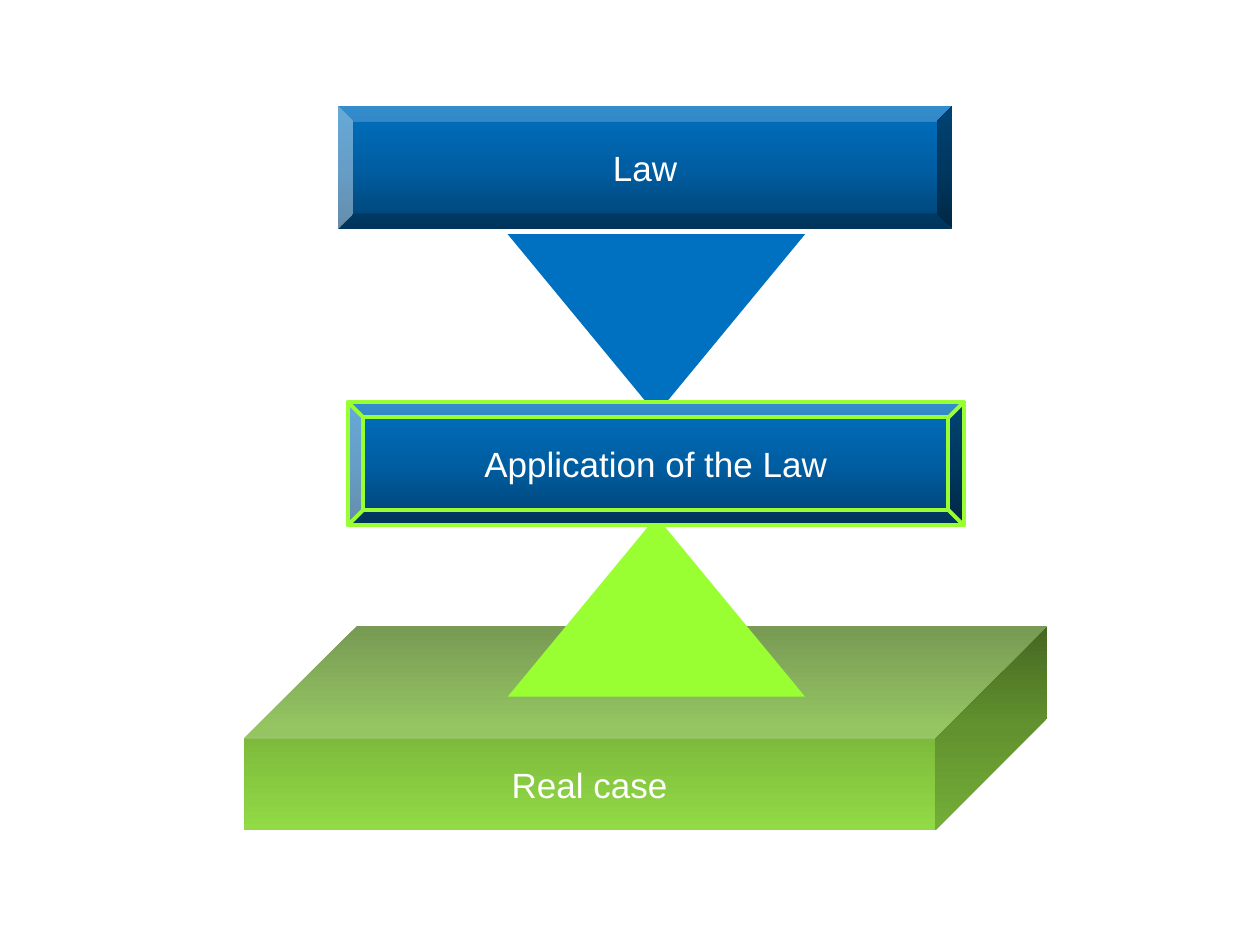
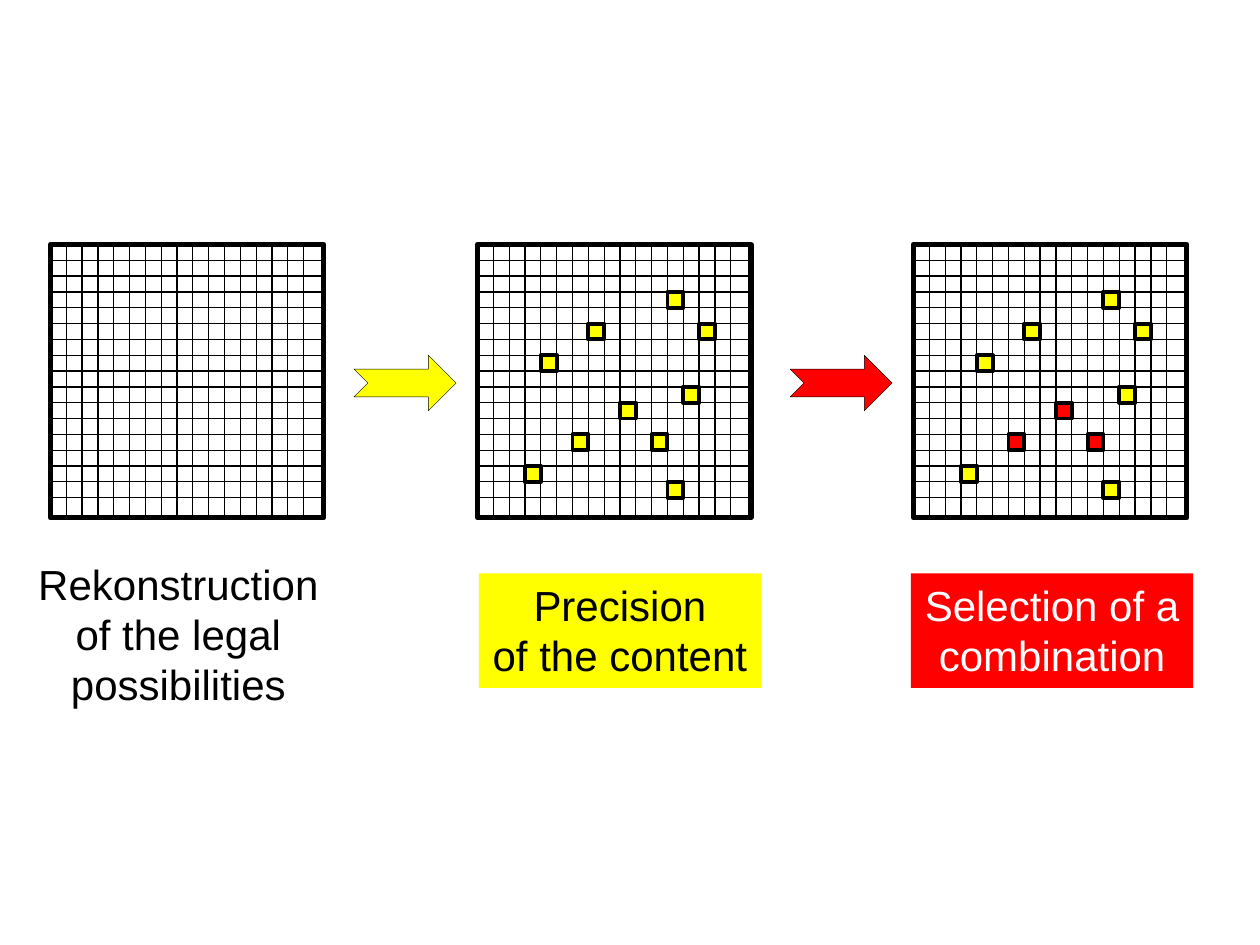
from collections import namedtuple
from copy import deepcopy
from dataclasses import dataclass

from lxml import etree
from pptx import Presentation
from pptx import util as u
from pptx.dml.color import RGBColor
from pptx.enum import shapes, text
from pptx.oxml.ns import qn

Box = namedtuple("Box", "left top width height")
Kind = shapes.MSO_SHAPE


@dataclass(frozen=True)
class Theme:
    """Colours, font and sizes used on both slides."""
    font: str = "Arial"
    label: int = 20
    caption: int = 24
    black: str = "000000"
    white: str = "FFFFFF"
    blue: str = "0070C0"
    lime: str = "99FF33"
    yellow: str = "FFFF00"
    red: str = "FF0000"
    blues: tuple = ("004272", "005EA2", "0070C0")
    greens: tuple = ("57812A", "7BB73B", "92DA46")
    frame_line: float = 3
    mark_line: float = 2.25
    grid_line: float = 0.75
    arrow_line: float = 0.25


THEME = Theme()
UPWARD, DOWNWARD = 90, 270
GRID_LINES = 16
GRID_REACH = 2.01
GRID_SIZE = 2.17
MARKS = [(4, 7), (7, 5), (9, 10), (12, 15), (13, 9),
         (12, 3), (3, 14), (6, 12), (11, 12), (14, 5)]
SELECTED = {(9, 10), (6, 12), (11, 12)}


def inside(box, left, top, width, height):
    """Return a box placed relative to another box."""
    return Box(box.left + left, box.top + top, width, height)


def inches(*lengths):
    """Turn plain numbers into lengths."""
    return [u.Inches(length) for length in lengths]


def colour(value):
    """Turn a hex value into a colour."""
    return RGBColor.from_string(value)


def set_gradient(shape, colours, angle):
    """Fill a shape with evenly spaced gradient stops."""
    shape.fill.gradient()
    shape.fill.gradient_angle = angle
    stop_list = shape._element.spPr.find(".//" + qn("a:gsLst"))
    stop_list.insert(1, deepcopy(stop_list[0]))
    for index, (stop, value) in enumerate(zip(shape.fill.gradient_stops, colours)):
        stop.position = index / (len(colours) - 1)
        stop.color.rgb = colour(value)


def add_block(parent, kind, box, fill=None, line=None, weight=1):
    """Add a flat preset shape with an optional outline."""
    shape = parent.shapes.add_shape(kind, *inches(*box))
    shape.shadow.inherit = False
    if fill:
        shape.fill.solid()
        shape.fill.fore_color.rgb = colour(fill)
    else:
        shape.fill.background()
    if line:
        shape.line.color.rgb = colour(line)
        shape.line.width = u.Pt(weight)
    else:
        shape.line.fill.background()
    return shape


def add_line(parent, start, end):
    """Add one thin grid line."""
    line = parent.shapes.add_connector(
        shapes.MSO_CONNECTOR.STRAIGHT, *inches(*start, *end))
    line.line.color.rgb = colour(THEME.black)
    line.line.width = u.Pt(THEME.grid_line)
    etree.SubElement(line._element.spPr, qn("a:effectLst"))


def write(shape, lines, size=THEME.label, color=THEME.white, wrap=True,
          anchor=text.MSO_ANCHOR.MIDDLE):
    """Write centred paragraphs into a shape."""
    frame = shape.text_frame
    frame.word_wrap = wrap
    frame.vertical_anchor = anchor
    if not wrap:
        frame.auto_size = text.MSO_AUTO_SIZE.SHAPE_TO_FIT_TEXT
    for index, line in enumerate(lines):
        para = frame.add_paragraph() if index else frame.paragraphs[0]
        para.alignment = text.PP_ALIGN.CENTER
        span = para.add_run()
        span.text = line
        span.font.name = THEME.font
        span.font.size = u.Pt(size)
        span.font.color.rgb = colour(color)


def add_plate(page, box, label, line=None):
    """Add a bevelled blue plate with its label."""
    plate = add_block(page, Kind.BEVEL, box, line=line, weight=THEME.mark_line)
    set_gradient(plate, THEME.blues, UPWARD)
    write(plate, [label])


def law_diagram(page, box):
    """Draw law and real case meeting in the application of the law."""
    add_plate(page, inside(box, 0.74, 0, 4.88, 0.98), "Law")
    law_wedge = add_block(page, Kind.ISOSCELES_TRIANGLE,
                          inside(box, 2.09, 1.02, 2.36, 1.43), THEME.blue)
    law_wedge._element.spPr.xfrm.set("flipV", "1")
    case_slab = add_block(page, Kind.CUBE, inside(box, 0, 4.13, 6.37, 1.62))
    case_slab.adjustments[0] = 0.55
    set_gradient(case_slab, THEME.greens, DOWNWARD)
    write(case_slab, ["Real case"])
    add_block(page, Kind.ISOSCELES_TRIANGLE,
              inside(box, 2.09, 3.26, 2.36, 1.43), THEME.lime)
    add_plate(page, inside(box, 0.82, 2.35, 4.89, 0.98),
              "Application of the Law", THEME.lime)


def add_grid(page, box):
    """Draw a framed grid of possibilities as one group."""
    group = page.shapes.add_group_shape()
    add_block(group, Kind.RECTANGLE, box, THEME.white, THEME.black, THEME.frame_line)
    right, bottom = box.left + box.width, box.top + box.height
    for number in range(1, GRID_LINES + 1):
        offset = number * GRID_REACH / GRID_LINES
        across, down = box.left + offset, box.top + offset
        add_line(group, (across, box.top), (across, bottom))
        add_line(group, (right, down), (box.left, down))


def add_marks(page, box, selected_fill):
    """Mark cells of the grid, filling the selected ones separately."""
    pitch = GRID_REACH / GRID_LINES
    for column, row in MARKS:
        fill = selected_fill if (column, row) in SELECTED else THEME.yellow
        cell = inside(box, column * pitch, row * pitch, pitch, pitch)
        add_block(page, Kind.RECTANGLE, cell, fill, THEME.black, THEME.mark_line)


def add_caption(page, box, lines, fill, color):
    """Add the caption below a grid, on a coloured panel if it has a fill."""
    if fill:
        caption = add_block(page, Kind.RECTANGLE, box, fill)
    else:
        caption = page.shapes.add_textbox(*inches(*box))
    write(caption, lines, size=THEME.caption, color=color, wrap=False,
          anchor=text.MSO_ANCHOR.TOP)


def add_stage(page, box, caption_box, lines, fill=None, color=THEME.black):
    """Draw one stage: grid, caption and, when filled, arrow and marks."""
    add_grid(page, box)
    add_caption(page, inside(box, *caption_box), lines, fill, color)
    if fill:
        add_marks(page, box, fill)
        add_block(page, Kind.NOTCHED_RIGHT_ARROW, inside(box, -0.98, 0.88, 0.81, 0.44),
                  fill, THEME.black, THEME.arrow_line)


def selection_diagram(page, box):
    """Draw the three stages from possibilities to one combination."""
    stages = [
        (0, (-0.21, 2.44, 2.45, 1.31),
         ["Rekonstruction", "of the legal", "possibilities"], None, THEME.black),
        (3.39, (0.01, 2.61, 2.24, 0.91),
         ["Precision", "of the content"], THEME.yellow, THEME.black),
        (6.85, (-0.02, 2.61, 2.24, 0.91),
         ["Selection of a", "combination"], THEME.red, THEME.white),
    ]
    for left, caption_box, lines, fill, color in stages:
        grid_box = inside(box, left, 0, GRID_SIZE, GRID_SIZE)
        add_stage(page, grid_box, caption_box, lines, fill, color)


def main():
    """Build and save the deck."""
    deck = Presentation()
    deck.slide_width, deck.slide_height = inches(10, 7.5)
    blank = deck.slide_layouts[6]
    law_diagram(deck.slides.add_slide(blank), Box(1.94, 0.84, 6.37, 5.75))
    selection_diagram(deck.slides.add_slide(blank), Box(0.4, 1.94, 9.02, 3.75))
    deck.save("out.pptx")


if __name__ == "__main__":
    main()
